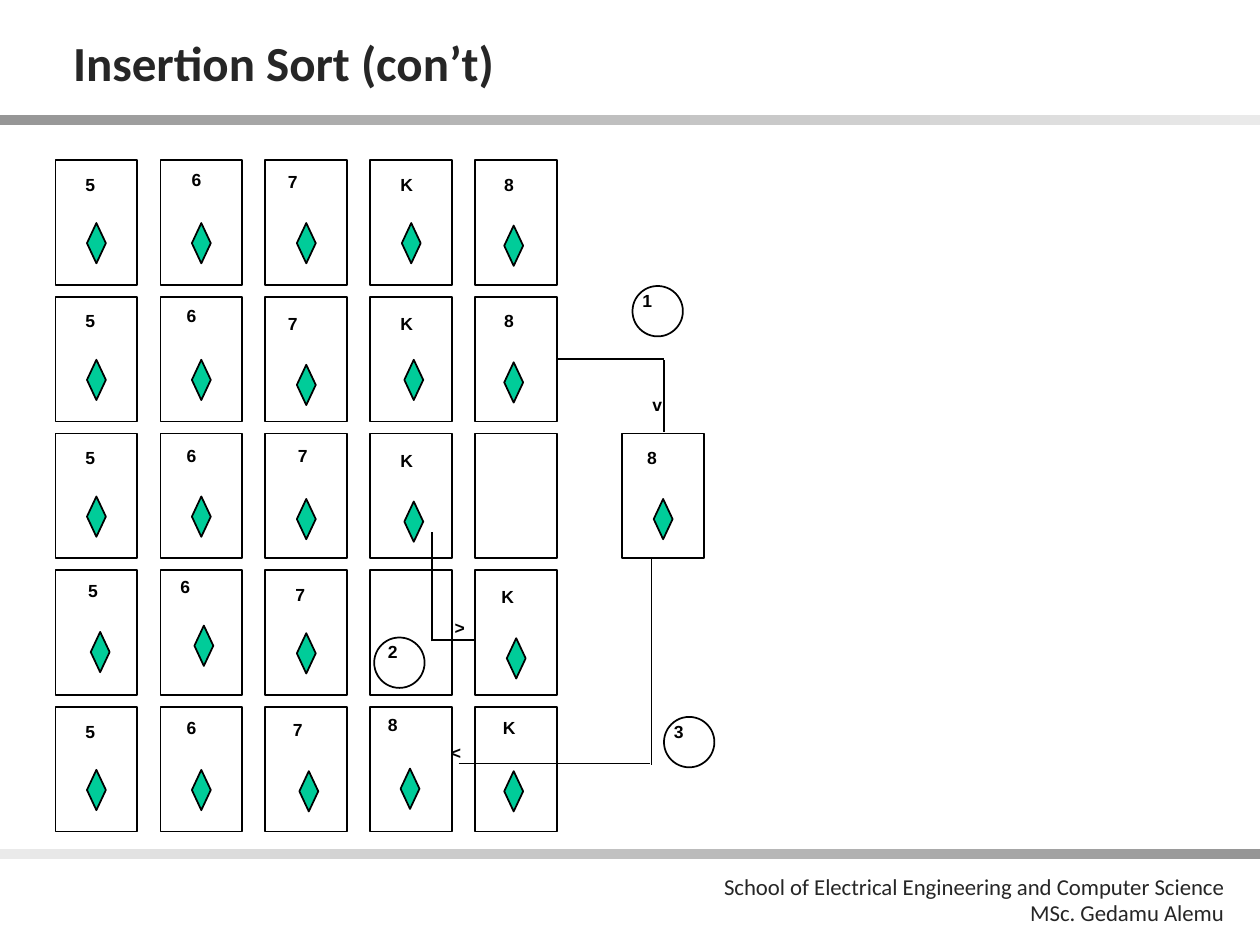
from lxml import etree
from pptx import Presentation
from pptx.dml.color import RGBColor
from pptx.enum.shapes import MSO_CONNECTOR, MSO_SHAPE
from pptx.enum.text import MSO_ANCHOR, MSO_AUTO_SIZE, PP_ALIGN
from pptx.oxml.ns import qn
from pptx.util import Inches, Pt

RECTANGLE, DIAMOND, OVAL = MSO_SHAPE.RECTANGLE, MSO_SHAPE.DIAMOND, MSO_SHAPE.OVAL
LEFT, RIGHT = PP_ALIGN.LEFT, PP_ALIGN.RIGHT
TOP, MIDDLE = MSO_ANCHOR.TOP, MSO_ANCHOR.MIDDLE
COLORS = {"ink": "000000", "text": "262626", "suit": "00CC99",
          "bar dark": "969696", "bar light": "EAEAEA"}

# Content
TITLE = "Insertion Sort (con’t)"
FOOTER = ["School of Electrical Engineering and Computer Science", "MSc. Gedamu Alemu"]

# Cards by row: column, value, value offset, diamond offset (from the card's corner)
CARD_ROWS = [
    [(0, "5", (0.14, 0.06), (0.25, 0.5)), (1, "6", (0.15, 0.02), (0.25, 0.5)),
     (2, "7", (0.08, 0.04), (0.25, 0.5)), (3, "K", (0.14, 0.06), (0.25, 0.5)),
     (4, "8", (0.13, 0.06), (0.23, 0.52))],
    [(0, "5", (0.14, 0.06), (0.25, 0.5)), (1, "6", (0.11, 0.02), (0.25, 0.5)),
     (2, "7", (0.08, 0.08), (0.25, 0.54)), (3, "K", (0.14, 0.08), (0.27, 0.5)),
     (4, "8", (0.13, 0.06), (0.23, 0.52))],
    [(0, "5", (0.14, 0.06), (0.25, 0.5)), (1, "6", (0.11, 0.04), (0.25, 0.5)),
     (2, "7", (0.16, 0.04), (0.25, 0.52)), (3, "K", (0.14, 0.08), (0.27, 0.54)),
     (4, "", None, None), (5.4, "8", (0.1, 0.06), (0.25, 0.52))],
    [(0, "5", (0.16, 0.03), (0.28, 0.49)), (1, "6", (0.06, 0), (0.27, 0.44)),
     (2, "7", (0.14, 0.06), (0.25, 0.5)), (3, "", None, None),
     (4, "K", (0.11, 0.08), (0.25, 0.54))],
    [(0, "5", (0.14, 0.06), (0.25, 0.5)), (1, "6", (0.11, 0.03), (0.25, 0.5)),
     (2, "7", (0.12, 0.05), (0.27, 0.51)), (3, "8", (0.04, 0.01), (0.24, 0.49)),
     (4, "K", (0.12, 0.03), (0.23, 0.51))],
]
# Step number, circle corner, number corner
STEPS = [("1", (5.02, 2.27), (5, 2.25)),
         ("2", (2.97, 5.06), (2.98, 5.04)),
         ("3", (5.27, 5.69), (5.25, 5.67))]
# Each move: line segments, then the sign that stands for its arrowhead
MOVES = [
    ([((5.27, 2.85), (4.43, 2.85)), ((5.27, 2.86), (5.27, 3.43))], "v", (5.08, 3.08)),
    ([((3.43, 5.09), (3.43, 4.22)), ((3.44, 5.08), (3.76, 5.08))], ">", (3.51, 4.85)),
    ([((5.17, 6.07), (5.17, 4.44)), ((3.64, 6.06), (5.16, 6.06))], "<", (3.48, 5.84)),
]

# Grid and sizes, in inches
SLIDE_WIDTH, SLIDE_HEIGHT = 10, 7.5
GRID_LEFT, GRID_TOP = 0.44, 1.27
COLUMN_STEP, ROW_STEP = 0.833, 1.085
CARD, SUIT, CIRCLE, SIGN = (0.65, 0.99), (0.15, 0.32), (0.4, 0.4), (0.28, 0.27)
BAR = (SLIDE_WIDTH, 0.08)

presentation = Presentation()
presentation.slide_width = Inches(SLIDE_WIDTH)
presentation.slide_height = Inches(SLIDE_HEIGHT)
slide = presentation.slides.add_slide(presentation.slide_layouts[6])


def color(name):
    return RGBColor.from_string(COLORS[name])


def box(corner, size):
    return [Inches(value) for value in (*corner, *size)]


def add_text(text, corner, size=SIGN, font="Arial", points=10, ink="ink", bold=True,
             align=LEFT, anchor=TOP, insets=(0.1, 0.05), wrap=False,
             line_spacing=None, space_before=0):
    frame = slide.shapes.add_textbox(*box(corner, size)).text_frame
    frame.word_wrap = wrap
    frame.auto_size = MSO_AUTO_SIZE.NONE if wrap else MSO_AUTO_SIZE.SHAPE_TO_FIT_TEXT
    frame.vertical_anchor = anchor
    frame.margin_left = frame.margin_right = Inches(insets[0])
    frame.margin_top = frame.margin_bottom = Inches(insets[1])
    frame.text = text
    for index, paragraph in enumerate(frame.paragraphs):
        paragraph.alignment = align
        if line_spacing:
            paragraph.line_spacing = Pt(line_spacing)
        if index:
            paragraph.space_before = Pt(space_before)
        for run in paragraph.runs:
            run.font.name, run.font.size, run.font.bold = font, Pt(points), bold
            run.font.color.rgb = color(ink)


def add_outline(kind, corner, size, fill=None):
    shape = slide.shapes.add_shape(kind, *box(corner, size))
    shape.shadow.inherit = False
    if fill:
        shape.fill.solid()
        shape.fill.fore_color.rgb = color(fill)
    else:
        shape.fill.background()
    shape.line.color.rgb = color("ink")
    shape.line.width = Pt(1)


def add_line(start, end):
    points = [Inches(value) for value in (*start, *end)]
    line = slide.shapes.add_connector(MSO_CONNECTOR.STRAIGHT, *points)
    line.line.color.rgb = color("ink")
    line.line.width = Pt(1)
    etree.SubElement(line._element.spPr, qn("a:effectLst"))


def add_bar(top, rotation):
    bar = slide.shapes.add_shape(RECTANGLE, *box((0, top), BAR))
    bar.shadow.inherit = False
    bar.rotation = rotation
    bar.line.fill.background()
    bar.fill.gradient()
    bar.fill.gradient_angle = 0
    for stop, name in zip(bar.fill.gradient_stops, ("bar dark", "bar light")):
        stop.color.rgb = color(name)


# Title, bars and footer
add_bar(0.91, 0)
add_bar(6.74, 180)
add_text(TITLE, (0.47, 0.21), (8.94, 0.57), font="Calibri", points=28, ink="text",
         anchor=MIDDLE, insets=(0.11, 0.06), wrap=True)
add_text("\n".join(FOOTER), (5.16, 6.93), (4.65, 0.49), font="Calibri", points=13,
         ink="text", bold=False, align=RIGHT, wrap=True, line_spacing=12, space_before=2.6)

# Cards
for row, cards in enumerate(CARD_ROWS):
    top = GRID_TOP + row * ROW_STEP
    for column, value, value_offset, suit_offset in cards:
        left = GRID_LEFT + column * COLUMN_STEP
        add_outline(RECTANGLE, (left, top), CARD)
        if value:
            add_outline(DIAMOND, (left + suit_offset[0], top + suit_offset[1]), SUIT, "suit")
            width = 0.3 if value == "K" else SIGN[0]
            add_text(value, (left + value_offset[0], top + value_offset[1]), (width, SIGN[1]))

# Moves and their step numbers
for segments, sign, corner in MOVES:
    for start, end in segments:
        add_line(start, end)
    add_text(sign, corner)
for number, circle_corner, number_corner in STEPS:
    add_outline(OVAL, circle_corner, CIRCLE)
    add_text(number, number_corner)

presentation.save("out.pptx")
